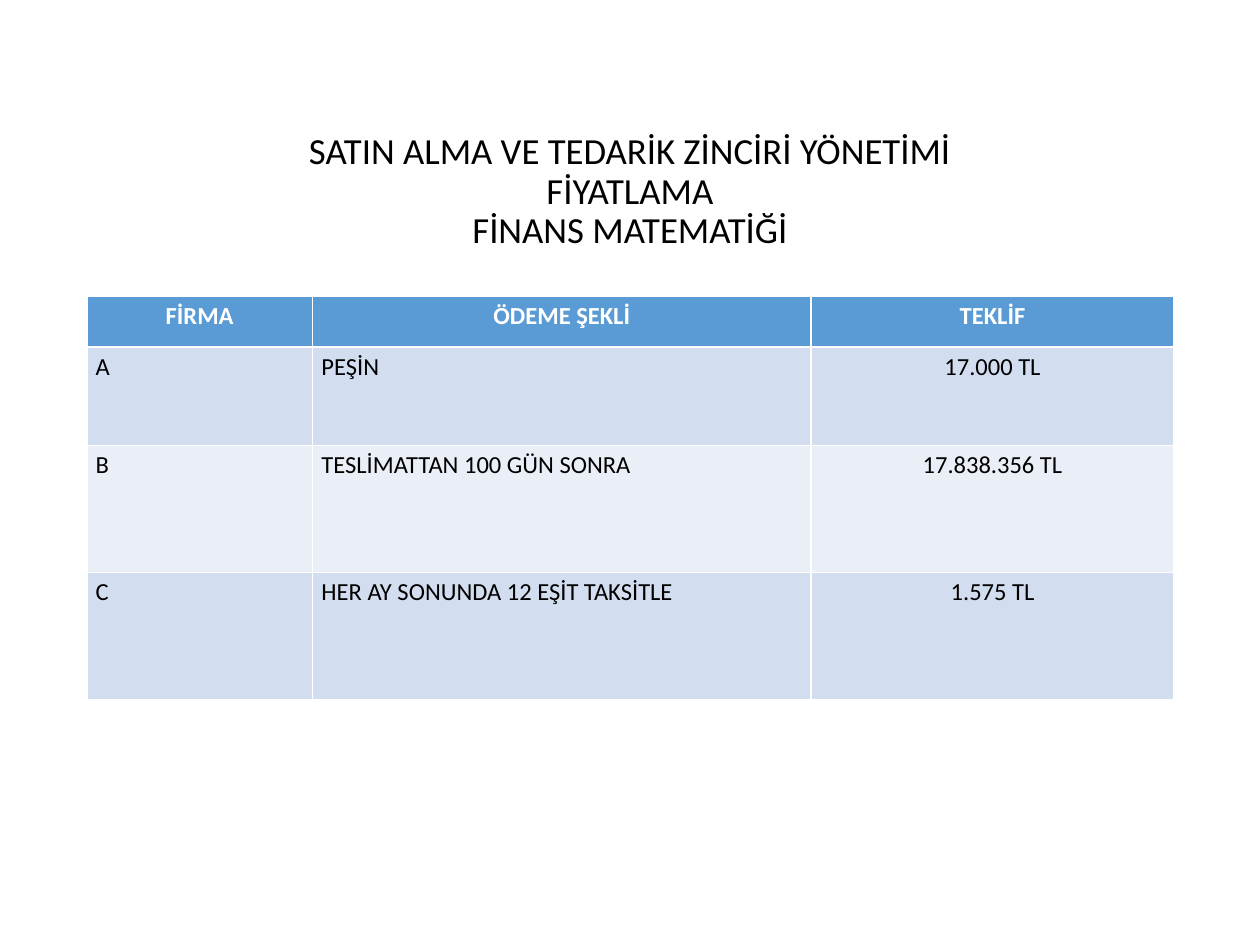
from pptx import Presentation
from pptx import util as u
from pptx.dml import color
from pptx.enum import text


def paint(hue):
    return color.RGBColor.from_string(hue)


def write(para, words, size, hue, bold=False):
    run = para.add_run()
    run.text = words
    font = run.font
    font.name = "Calibri"
    font.size = u.Pt(size)
    font.bold = bold
    font.color.rgb = paint(hue)


deck = Presentation()
deck.slide_width = u.Cm(25.4)
deck.slide_height = u.Cm(19.05)
slide = deck.slides.add_slide(deck.slide_layouts[5])

title = slide.shapes.title
title.left, title.top = u.Cm(1.75), u.Cm(2.39)
title.width, title.height = u.Cm(21.9), u.Cm(2.97)
frame = title.text_frame
frame.word_wrap = True
frame.auto_size = text.MSO_AUTO_SIZE.NONE
frame.vertical_anchor = text.MSO_ANCHOR.MIDDLE
para = frame.paragraphs[0]
para.alignment = text.PP_ALIGN.CENTER
para.line_spacing = 0.9
lines = ["SATIN ALMA VE TEDARİK ZİNCİRİ YÖNETİMİ", "FİYATLAMA", "FİNANS MATEMATİĞİ"]
for i, line in enumerate(lines):
    if i:
        para.add_line_break()
    write(para, line, 21, "000000")

offers = [
    ["FİRMA", "ÖDEME ŞEKLİ", "TEKLİF"],
    ["A", "PEŞİN", "17.000 TL"],
    ["B", "TESLİMATTAN 100 GÜN SONRA", "17.838.356 TL"],
    ["C", "HER AY SONUNDA 12 EŞİT TAKSİTLE", "1.575 TL"],
]
widths = [4.55, 10.05, 7.32]
heights = [1.03, 1.98, 2.56, 2.56]
fills = ["5B9BD5", "D2DEEF", "EAEFF7", "D2DEEF"]

table = slide.shapes.add_table(
    len(offers), len(widths), u.Cm(1.75), u.Cm(5.97),
    u.Cm(sum(widths)), u.Cm(sum(heights))).table
for col, width in zip(table.columns, widths):
    col.width = u.Cm(width)
for r, offer in enumerate(offers):
    table.rows[r].height = u.Cm(heights[r])
    head = r == 0
    for c, words in enumerate(offer):
        cell = table.cell(r, c)
        cell.fill.solid()
        cell.fill.fore_color.rgb = paint(fills[r])
        cell.margin_left = cell.margin_right = u.Cm(0.18)
        cell.margin_top = cell.margin_bottom = u.Cm(0.1)
        para = cell.text_frame.paragraphs[0]
        center = head or c == 2
        para.alignment = text.PP_ALIGN.CENTER if center else text.PP_ALIGN.LEFT
        write(para, words, 14, "FFFFFF" if head else "000000", head)

deck.save("out.pptx")
